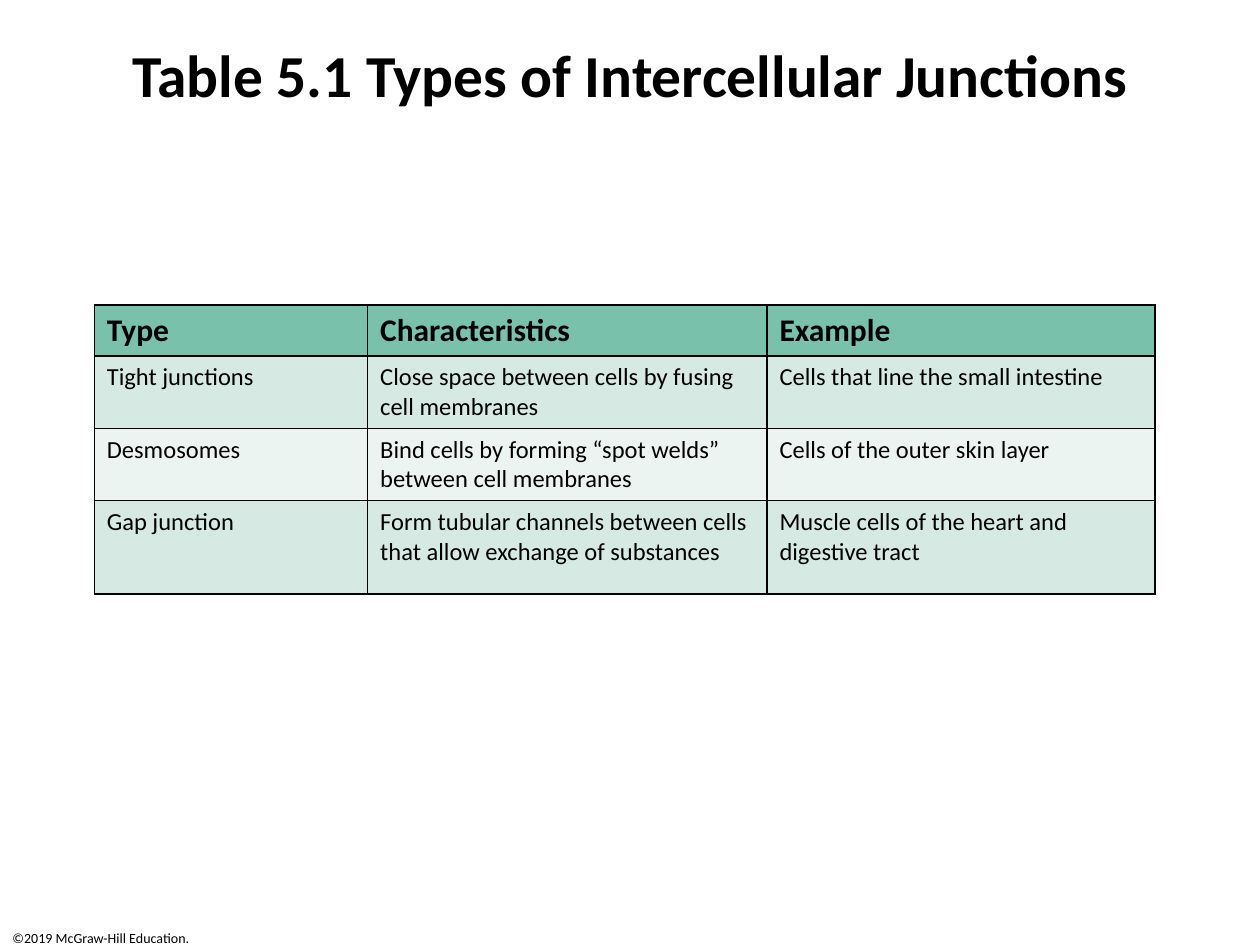
from lxml import etree
from pptx import Presentation
from pptx.dml.color import RGBColor
from pptx.enum.text import MSO_ANCHOR, PP_ALIGN
from pptx.oxml.ns import qn
from pptx.util import Cm, Pt

TOP = MSO_ANCHOR.TOP
LEFT, CENTER = PP_ALIGN.LEFT, PP_ALIGN.CENTER

FONT = "Calibri"
BLACK = RGBColor(0x00, 0x00, 0x00)
HEADER_GREEN = RGBColor(0x7A, 0xC1, 0xAC)
BANDS = [RGBColor(0xD7, 0xE9, 0xE3), RGBColor(0xEC, 0xF4, 0xF1)]

COL_WIDTHS = [5.51, 8.05, 7.82]
ROW_HEIGHTS = [0.94, 1.35, 1.35, 1.88]
JUNCTIONS = [
    ["Type", "Characteristics", "Example"],
    ["Tight junctions", "Close space between cells by fusing cell membranes",
     "Cells that line the small intestine"],
    ["Desmosomes", "Bind cells by forming “spot welds” between cell membranes",
     "Cells of the outer skin layer"],
    ["Gap junction", "Form tubular channels between cells that allow exchange of substances",
     "Muscle cells of the heart and digestive tract"],
]


def set_text(tf, text, size, bold=False, align=LEFT):
    tf.text = text
    tf.word_wrap = True
    p = tf.paragraphs[0]
    p.alignment = align
    font = p.runs[0].font
    font.name, font.size, font.bold = FONT, Pt(size), bold
    font.color.rgb = BLACK


def add_borders(cell, width=1):
    tc_pr = cell._tc.get_or_add_tcPr()
    for i, side in enumerate(("lnL", "lnR", "lnT", "lnB")):
        ln = etree.Element(qn(f"a:{side}"), w=str(Pt(width)))
        fill = etree.SubElement(ln, qn("a:solidFill"))
        etree.SubElement(fill, qn("a:srgbClr"), val=str(BLACK))
        tc_pr.insert(i, ln)  # borders come before the cell fill


def add_title(s, text):
    title = s.shapes.title
    title.left, title.top = Cm(1.27), Cm(0.64)
    title.width, title.height = Cm(22.86), Cm(2.96)
    title.text_frame.vertical_anchor = TOP
    set_text(title.text_frame, text, 34, bold=True, align=CENTER)


def add_junction_table(s):
    frame = s.shapes.add_table(len(JUNCTIONS), len(COL_WIDTHS), Cm(1.9), Cm(6.15),
                               Cm(sum(COL_WIDTHS)), Cm(sum(ROW_HEIGHTS)))
    table = frame.table
    for column, width in zip(table.columns, COL_WIDTHS):
        column.width = Cm(width)
    for i, (row, height) in enumerate(zip(table.rows, ROW_HEIGHTS)):
        row.height = Cm(height)
        is_header = i == 0
        for cell, text in zip(row.cells, JUNCTIONS[i]):
            set_text(cell.text_frame, text, 18 if is_header else 14, bold=is_header)
            cell.fill.solid()
            cell.fill.fore_color.rgb = HEADER_GREEN if is_header else BANDS[(i - 1) % 2]
            add_borders(cell)


def add_copyright(s, text):
    box = s.shapes.add_textbox(Cm(0), Cm(18.62), Cm(4.24), Cm(0.43))
    set_text(box.text_frame, text, 8)


def main():
    prs = Presentation()
    prs.slide_width, prs.slide_height = Cm(25.4), Cm(19.05)
    s = prs.slides.add_slide(prs.slide_layouts[5])

    # Heading
    add_title(s, "Table 5.1 Types of Intercellular Junctions")
    # Junction types
    add_junction_table(s)
    # Footer
    add_copyright(s, "©2019 McGraw-Hill Education.")

    prs.save("out.pptx")


if __name__ == "__main__":
    main()
